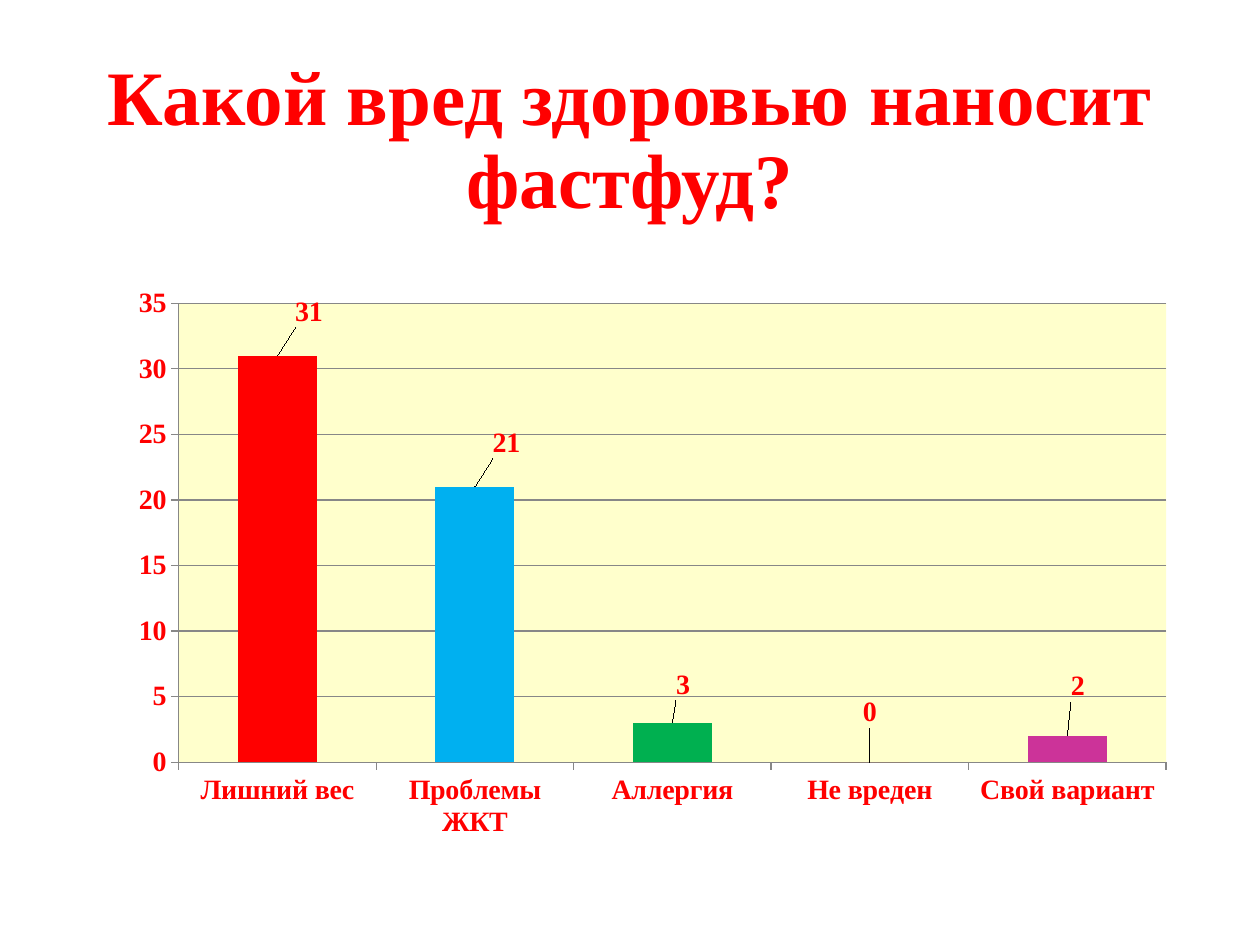
from lxml.etree import SubElement
from pptx import Presentation
from pptx.chart.data import CategoryChartData
from pptx.dml.color import RGBColor
from pptx.enum.chart import XL_CHART_TYPE as ChartType, XL_LABEL_POSITION as LabelPosition
from pptx.enum.chart import XL_TICK_MARK as TickMark
from pptx.enum.text import MSO_ANCHOR as Anchor, PP_ALIGN as Align
from pptx.oxml import parse_xml
from pptx.oxml.ns import nsdecls, qn
from pptx.util import Cm, Pt

COLORS = {"text": "FF0000", "plot": "FFFFCC", "line": "878787", "series": "5B9BD5"}
FONT = "Times New Roman"
HARMS = [
    ("Лишний вес", 31, "FF0000", (0.03, -0.04)),
    ("Проблемы ЖКТ", 21, "00B0F0", (0.03, -0.04)),
    ("Аллергия", 3, "00B050", (0.01, -0.03)),
    ("Не вреден", 0, "C55A11", (0, -0.05)),
    ("Свой вариант", 2, "CC3399", (0.01, -0.05)),
]


def paint(fill, color):
    """Give a fill one solid colour."""
    fill.solid()
    fill.fore_color.rgb = RGBColor.from_string(color)


def style_font(font, size):
    """Apply the bold red serif face used throughout the slide."""
    font.name, font.size, font.bold = FONT, Pt(size), True
    font.color.rgb = RGBColor.from_string(COLORS["text"])


def manual_layout(**settings):
    """Return a chart layout element holding the given settings in order."""
    layout = parse_xml(f"<c:layout {nsdecls('c')}><c:manualLayout/></c:layout>")
    for tag, value in settings.items():
        SubElement(layout[0], qn(f"c:{tag}")).set("val", str(value))
    return layout


def add_question(slide, left, top, width, height):
    """Place the survey question in the title placeholder."""
    question = slide.shapes.title
    question.left, question.top, question.width, question.height = left, top, width, height
    frame = question.text_frame
    frame.text = "Какой вред здоровью наносит фастфуд?"
    frame.word_wrap = True
    frame.vertical_anchor = Anchor.MIDDLE
    line = frame.paragraphs[0]
    line.alignment, line.line_spacing = Align.CENTER, 0.9
    style_font(line.runs[0].font, 44)


def style_axes(chart):
    """Format both axes and the gridlines."""
    for axis in (chart.category_axis, chart.value_axis):
        style_font(axis.tick_labels.font, 16)
        axis.major_tick_mark, axis.minor_tick_mark = TickMark.OUTSIDE, TickMark.NONE
        axis.format.line.color.rgb = RGBColor.from_string(COLORS["line"])
        axis.format.line.width = Pt(0.75)
    scale = chart.value_axis
    scale.minimum_scale, scale.maximum_scale, scale.major_unit = 0, 35, 5
    scale.has_major_gridlines = True
    scale.major_gridlines.format.line.color.rgb = RGBColor.from_string(COLORS["line"])
    scale.major_gridlines.format.line.width = Pt(0.75)


def style_plot_area(chart):
    """Fix the inner plot area and fill its background."""
    area = chart.plots[0]._element.getparent()
    for layout in area.findall(qn("c:layout")):
        area.remove(layout)
    area.insert(0, manual_layout(layoutTarget="inner", xMode="edge", yMode="edge",
                                 x=0.061, y=0.034, w=0.939, h=0.797))
    area.append(parse_xml(
        f"<c:spPr {nsdecls('c', 'a')}><a:solidFill>"
        f"<a:srgbClr val='{COLORS['plot']}'/></a:solidFill></c:spPr>"))


def style_columns(plot):
    """Colour each column and shift its value label."""
    plot.gap_width, plot.vary_by_categories = 150, False
    answers = plot.series[0]
    paint(answers.format.fill, COLORS["series"])
    answers.data_labels.show_value = True
    style_font(answers.data_labels.font, 16)
    for index, (_, _, color, _) in enumerate(HARMS):
        column = answers.points[index]
        paint(column.format.fill, color)
        style_font(column.data_label.font, 16)
        column.data_label.position = LabelPosition.OUTSIDE_END
    labels = answers.data_labels._element.findall(qn("c:dLbl"))
    for label, (_, _, _, (dx, dy)) in zip(labels, HARMS):
        label.insert(1, manual_layout(x=dx, y=dy))


def add_harm_chart(slide, left, top, width, height):
    """Place the column chart of answers in the given box."""
    data = CategoryChartData()
    data.categories = [harm for harm, *_ in HARMS]
    data.add_series("Series 1", [votes for _, votes, *_ in HARMS])
    chart = slide.shapes.add_chart(
        ChartType.COLUMN_CLUSTERED, left, top, width, height, data).chart
    chart.has_title = chart.has_legend = False
    chart.font.name, chart.font.size = "Calibri", Pt(10)
    style_axes(chart)
    style_columns(chart.plots[0])
    style_plot_area(chart)


def main():
    """Build and save the slide."""
    deck = Presentation()
    deck.slide_width, deck.slide_height = Cm(25.4), Cm(19.05)
    slide = deck.slides.add_slide(deck.slide_layouts[5])
    add_question(slide, Cm(1.75), Cm(1.02), Cm(21.9), Cm(3.68))
    add_harm_chart(slide, Cm(2.31), Cm(5.72), Cm(21.21), Cm(11.61))
    deck.save("out.pptx")


if __name__ == "__main__":
    main()
